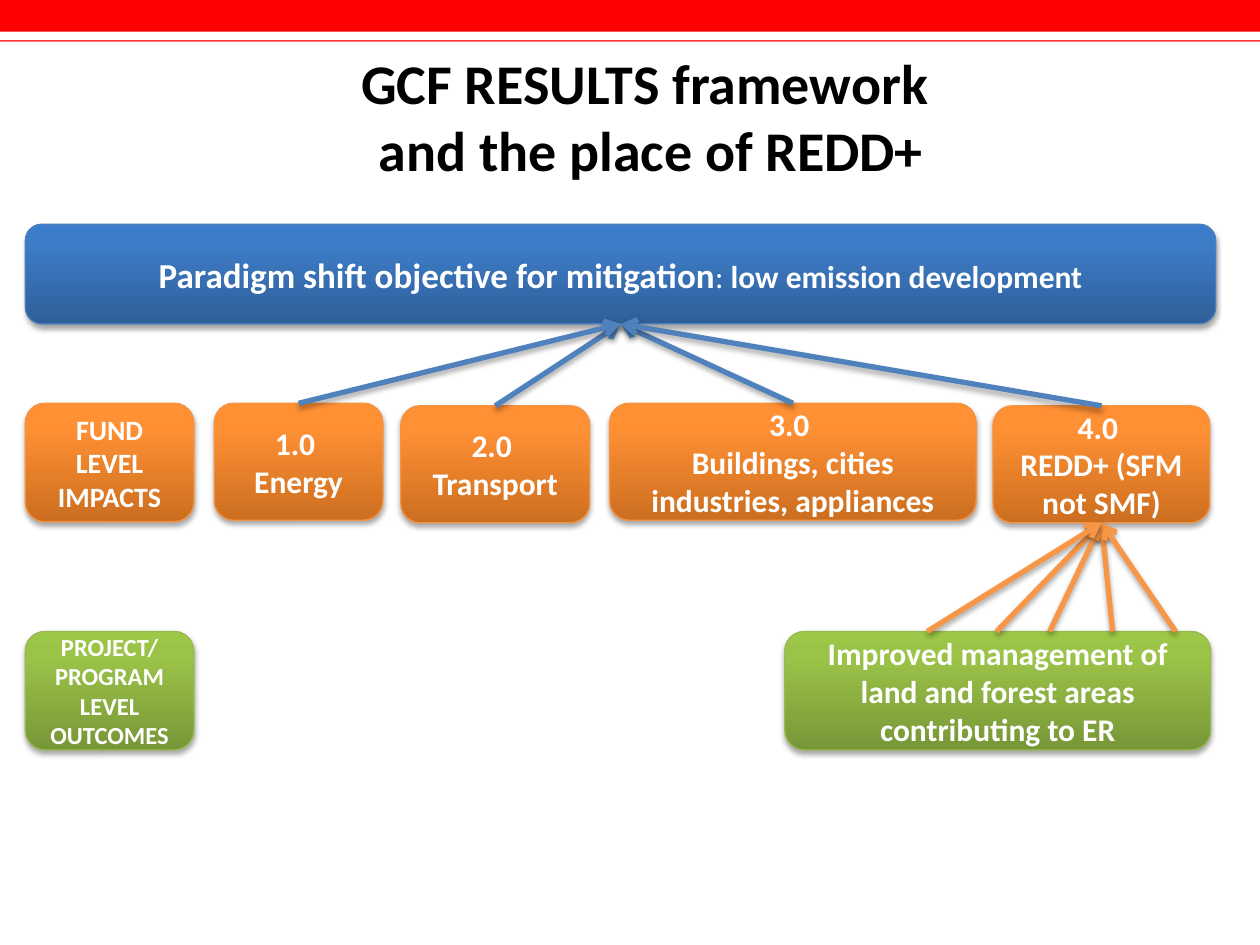
from pptx import Presentation
from pptx.dml.color import RGBColor
from pptx.enum.shapes import MSO_CONNECTOR, MSO_SHAPE
from pptx.enum.text import MSO_ANCHOR, PP_ALIGN
from pptx.oxml import parse_xml
from pptx.oxml.ns import nsdecls
from pptx.util import Cm, Pt

COLORS = {
    "bar": "FF0000", "rule": "FF3333", "title": "000000", "text": "FFFFFF",
    "blue_arrow": "4F81BD", "orange_arrow": "F79646",
    "blue": ("2F5F99", "3D7CC7", "3A7CCB", "4B7EBC"),
    "orange": ("CC6E20", "FF9034", "FF9136", "F69240"),
    "green": ("779737", "9BC348", "9DC746", "98B955"),
}
SHADOW = (
    f'<a:effectLst {nsdecls("a")}><a:outerShdw blurRad="40000" dist="23000" dir="5400000" '
    'rotWithShape="0"><a:srgbClr val="000000"><a:alpha val="35000"/></a:srgbClr>'
    '</a:outerShdw></a:effectLst>'
)


def write_text(shape, text, size, color):
    frame = shape.text_frame
    frame.word_wrap = True
    frame.vertical_anchor = MSO_ANCHOR.MIDDLE
    frame.text = text
    for para in frame.paragraphs:
        para.alignment = PP_ALIGN.CENTER
        for span in para.runs:
            span.font.name = "Calibri"
            span.font.size = Pt(size)
            span.font.bold = True
            span.font.color.rgb = RGBColor.from_string(color)


def add_arrow(start, end, color):
    arrow = page.shapes.add_connector(MSO_CONNECTOR.STRAIGHT, *start, *end)
    arrow.line.width = Pt(3)
    arrow.line.color.rgb = RGBColor.from_string(color)
    arrow.line._get_or_add_ln().append(parse_xml(f'<a:tailEnd {nsdecls("a")} type="arrow"/>'))
    arrow.element.spPr.append(parse_xml(SHADOW))
    return arrow


deck = Presentation()
deck.slide_width, deck.slide_height = Cm(25.4), Cm(19.05)
page = deck.slides.add_slide(deck.slide_layouts[6])

for top, height, color in [(0, 0.64, "bar"), (0.81, 0.03, "rule")]:
    band = page.shapes.add_shape(MSO_SHAPE.RECTANGLE, 0, Cm(top), deck.slide_width, Cm(height))
    band.shadow.inherit = False
    band.fill.solid()
    band.fill.fore_color.rgb = RGBColor.from_string(COLORS[color])
    band.line.fill.background()

title = page.shapes.add_textbox(Cm(1.7), Cm(0.74), Cm(22.86), Cm(3.18))
write_text(title, "GCF RESULTS framework \vand the place of REDD+", 32, COLORS["title"])

BOXES = [
    ("objective", 0.51, 4.52, 24, 2.01, "blue", 20, "Paradigm shift objective for mitigation"),
    ("energy", 4.32, 8.13, 3.4, 2.36, "orange", 18, "1.0 \nEnergy"),
    ("redd", 20.02, 8.18, 4.37, 2.36, "orange", 18, "4.0 \nREDD+ (SFM not SMF)"),
    ("buildings", 12.29, 8.13, 7.39, 2.36, "orange", 18,
     "3.0 \nBuildings, cities industries, appliances"),
    ("transport", 8.08, 8.18, 3.81, 2.36, "orange", 18, "2.0 \nTransport"),
    ("impacts", 0.51, 8.13, 3.4, 2.39, "orange", 16, "FUND LEVEL IMPACTS"),
    ("outcomes", 0.51, 12.73, 3.4, 2.39, "green", 14, "PROJECT/\nPROGRAM LEVEL OUTCOMES"),
    ("management", 15.82, 12.73, 8.59, 2.39, "green", 18,
     "Improved management of land and forest areas contributing to ER"),
]
boxes = {}
for name, left, top, width, height, palette, size, text in BOXES:
    box = page.shapes.add_shape(
        MSO_SHAPE.ROUNDED_RECTANGLE, Cm(left), Cm(top), Cm(width), Cm(height))
    *shades, edge = COLORS[palette]
    stops = "".join(
        f'<a:gs pos="{position}"><a:srgbClr val="{shade}"/></a:gs>'
        for position, shade in zip((0, 80000, 100000), shades))
    box.element.spPr.append(parse_xml(
        f'<a:gradFill {nsdecls("a")} rotWithShape="1"><a:gsLst>{stops}</a:gsLst>'
        '<a:lin ang="16200000" scaled="0"/></a:gradFill>'))
    box.line.color.rgb = RGBColor.from_string(edge)
    box.line.width = Pt(0.75)
    box.element.spPr.append(parse_xml(SHADOW))
    write_text(box, text, size, COLORS["text"])
    boxes[name] = box

objective, redd = boxes["objective"], boxes["redd"]
para = objective.text_frame.paragraphs[0]
for text, bold in [(": ", False), ("low emission development", True)]:
    span = para.add_run()
    span.text = text
    span.font.name = "Calibri"
    span.font.size = Pt(18)
    span.font.bold = bold
    span.font.color.rgb = RGBColor.from_string(COLORS["text"])

for name in ("buildings", "redd", "transport", "energy"):
    arrow = add_arrow((0, 0), (0, 0), COLORS["blue_arrow"])
    arrow.begin_connect(boxes[name], 0)
    arrow.end_connect(objective, 2)

for left in (20.09, 21.16, 22.43, 23.7, 18.69):
    arrow = add_arrow((Cm(left), boxes["management"].top), (Cm(22.2), Cm(10.52)),
                      COLORS["orange_arrow"])
    arrow.end_connect(redd, 2)

deck.save("out.pptx")
